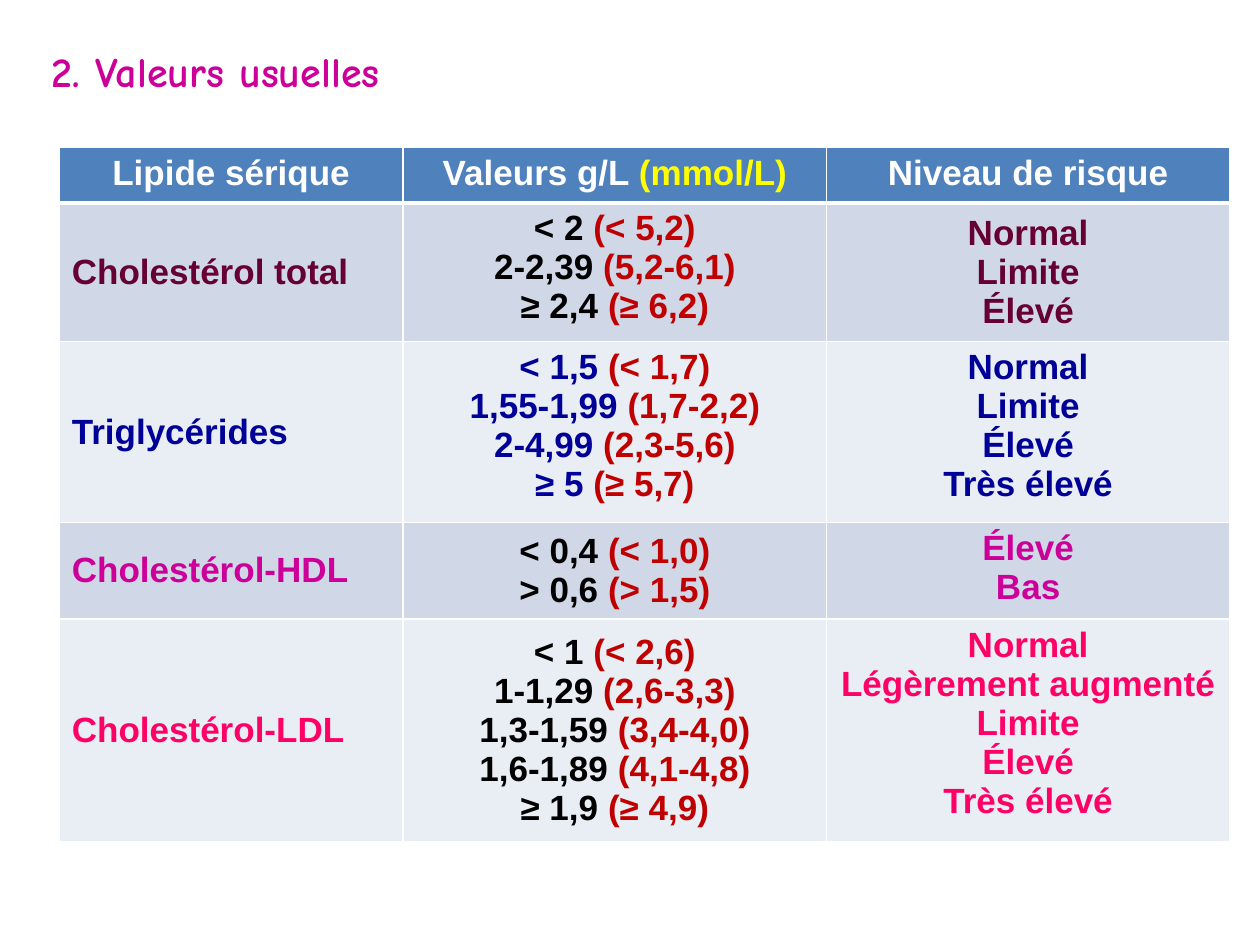
import pptx
import pptx.dml.color
import pptx.enum.text
import pptx.oxml
import pptx.oxml.ns
import pptx.util

Inches = pptx.util.Inches
Pt = pptx.util.Pt
ALIGN = pptx.enum.text.PP_ALIGN
ANCHOR = pptx.enum.text.MSO_ANCHOR

COLORS = {
    "white": "FFFFFF", "black": "000000", "yellow": "FFFF00", "red": "C00000",
    "plum": "660033", "navy": "000099", "magenta": "CC0099", "pink": "FF0066",
    "header": "4F81BD", "band_dark": "D0D8E8", "band_light": "E9EDF4",
}

HEADER = ["Lipide sérique", [("Valeurs g/L ", "white"), ("(mmol/L)", "yellow")],
          "Niveau de risque"]
COLUMN_WIDTHS = [2.73, 3.36, 3.2]
HEADER_HEIGHT = 0.44

# One entry per lipid: (g/L, mmol/L, risk level) for each threshold
LIPIDS = [
    dict(name="Cholestérol total", color="plum", value_color="black", height=1.1,
         value_anchor=ANCHOR.TOP, risk_anchor=ANCHOR.MIDDLE,
         levels=[("< 2", "< 5,2", "Normal"), ("2-2,39", "5,2-6,1", "Limite"),
                 ("≥ 2,4", "≥ 6,2", "Élevé")]),
    dict(name="Triglycérides", color="navy", value_color="navy", height=1.43,
         value_anchor=ANCHOR.TOP, risk_anchor=ANCHOR.TOP,
         levels=[("< 1,5", "< 1,7", "Normal"), ("1,55-1,99", "1,7-2,2", "Limite"),
                 ("2-4,99", "2,3-5,6", "Élevé"), ("≥ 5", "≥ 5,7", "Très élevé")]),
    dict(name="Cholestérol-HDL", color="magenta", value_color="black", height=0.77,
         value_anchor=ANCHOR.MIDDLE, risk_anchor=ANCHOR.TOP,
         levels=[("< 0,4", "< 1,0", "Élevé"), ("> 0,6", "> 1,5", "Bas")]),
    dict(name="Cholestérol-LDL", color="pink", value_color="black", height=1.76,
         value_anchor=ANCHOR.MIDDLE, risk_anchor=ANCHOR.TOP,
         levels=[("< 1", "< 2,6", "Normal"),
                 ("1-1,29", "2,6-3,3", "Légèrement augmenté"),
                 ("1,3-1,59", "3,4-4,0", "Limite"), ("1,6-1,89", "4,1-4,8", "Élevé"),
                 ("≥ 1,9", "≥ 4,9", "Très élevé")]),
]


def write_text(frame, lines, size=20, font="Arial", color="white", align=ALIGN.CENTER):
    """Write lines; a line is a string or a list of (text, color) pieces."""
    for index, line in enumerate(lines):
        para = frame.paragraphs[0] if index == 0 else frame.add_paragraph()
        para.alignment = align
        pieces = [(line, color)] if isinstance(line, str) else line
        for text, piece_color in pieces:
            span = para.add_run()
            span.text = text
            span.font.name = font
            span.font.size = Pt(size)
            span.font.bold = True
            span.font.color.rgb = pptx.dml.color.RGBColor.from_string(COLORS[piece_color])


class SlideBuilder:
    def __init__(self, deck):
        self.border_color = COLORS["white"]
        self.page = deck.slides.add_slide(deck.slide_layouts[5])

    def title(self, text, left, top, width, height):
        box = self.page.shapes.title
        box.left, box.top = Inches(left), Inches(top)
        box.width, box.height = Inches(width), Inches(height)
        frame = box.text_frame
        frame.word_wrap = False
        frame.auto_size = pptx.enum.text.MSO_AUTO_SIZE.SHAPE_TO_FIT_TEXT
        frame.vertical_anchor = ANCHOR.TOP
        write_text(frame, [text], size=24, font="Comic Neue", color="magenta",
                   align=ALIGN.LEFT)

    def table(self, left, top, widths, heights):
        table = self.page.shapes.add_table(
            len(heights), len(widths), Inches(left), Inches(top),
            Inches(sum(widths)), Inches(sum(heights))).table
        for column, width in zip(table.columns, widths):
            column.width = Inches(width)
        for row, height in zip(table.rows, heights):
            row.height = Inches(height)
        return table

    def cell(self, cell, lines, fill, anchor=ANCHOR.TOP, top_line=1, bottom_line=1,
             **text_format):
        properties = cell._tc.get_or_add_tcPr()
        for side, width in (("L", 1), ("R", 1), ("T", top_line), ("B", bottom_line)):
            properties.append(pptx.oxml.parse_xml(
                f'<a:ln{side} {pptx.oxml.ns.nsdecls("a")} w="{Pt(width)}"><a:solidFill>'
                f'<a:srgbClr val="{self.border_color}"/></a:solidFill></a:ln{side}>'))
        cell.fill.solid()
        cell.fill.fore_color.rgb = pptx.dml.color.RGBColor.from_string(COLORS[fill])
        cell.vertical_anchor = anchor
        write_text(cell.text_frame, lines, **text_format)


def main():
    deck = pptx.Presentation()
    deck.slide_width, deck.slide_height = Inches(10), Inches(7.5)
    builder = SlideBuilder(deck)

    # Title
    builder.title("2. Valeurs usuelles", 0.31, 0.31, 3.28, 0.5)

    # Table header
    heights = [HEADER_HEIGHT] + [lipid["height"] for lipid in LIPIDS]
    table = builder.table(0.47, 1.17, COLUMN_WIDTHS, heights)
    for column, heading in enumerate(HEADER):
        builder.cell(table.cell(0, column), [heading], "header", bottom_line=3)

    # One row per lipid
    for row, lipid in enumerate(LIPIDS, start=1):
        band = "band_dark" if row % 2 else "band_light"
        top_line = 3 if row == 1 else 1
        values = [[(f"{grams} ", lipid["value_color"]), (f"({moles})", "red")]
                  for grams, moles, risk in lipid["levels"]]
        risks = [risk for grams, moles, risk in lipid["levels"]]
        builder.cell(table.cell(row, 0), [lipid["name"]], band, ANCHOR.MIDDLE, top_line,
                     color=lipid["color"], align=ALIGN.LEFT)
        builder.cell(table.cell(row, 1), values, band, lipid["value_anchor"], top_line)
        builder.cell(table.cell(row, 2), risks, band, lipid["risk_anchor"], top_line,
                     color=lipid["color"])

    deck.save("out.pptx")


if __name__ == "__main__":
    main()
